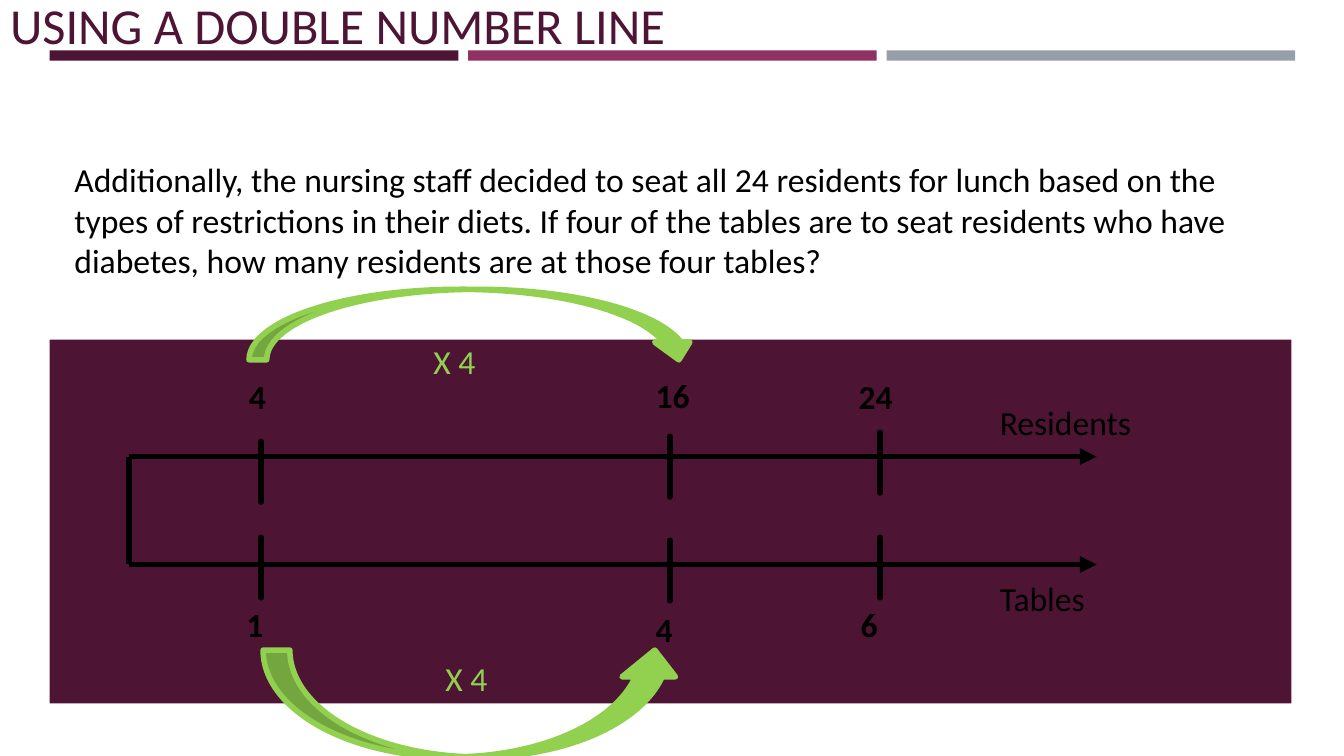
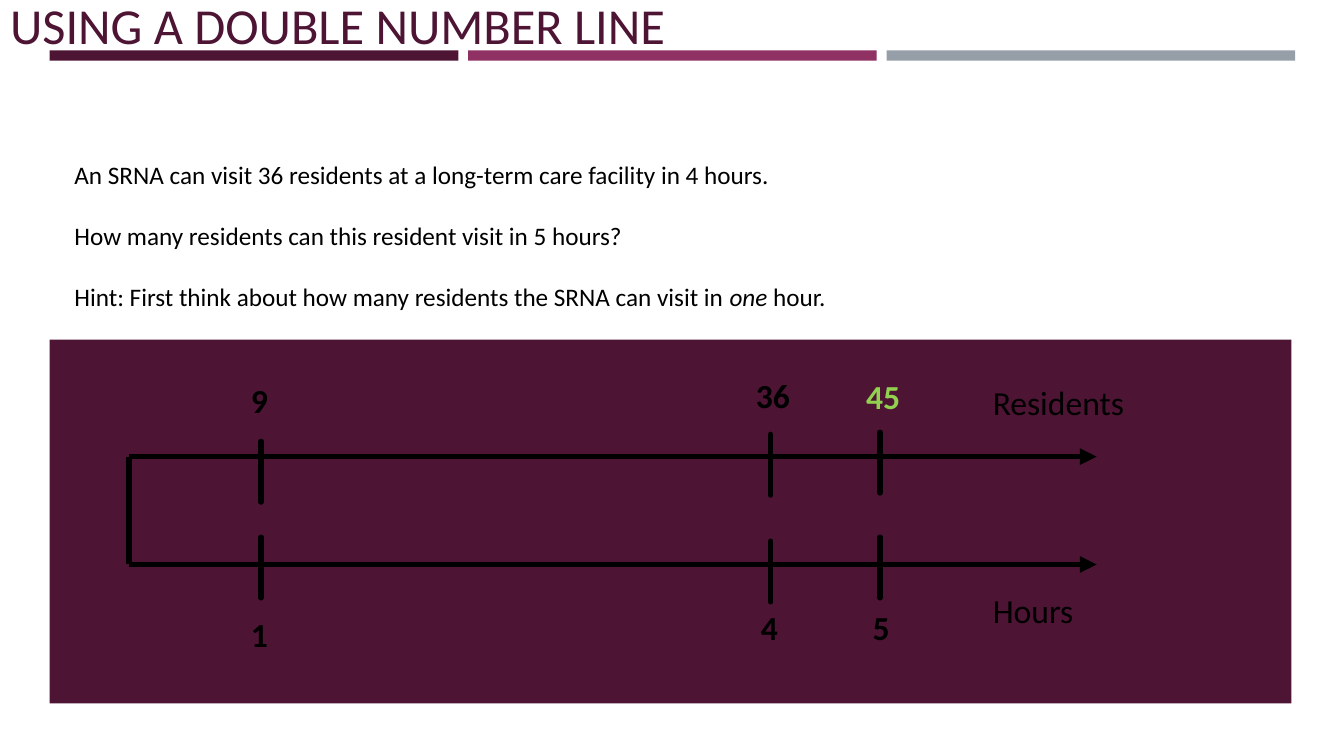
from collections import namedtuple

from lxml.etree import SubElement
from pptx import Presentation
from pptx.dml.color import RGBColor
from pptx.enum.shapes import MSO_CONNECTOR, MSO_SHAPE
from pptx.enum.text import MSO_ANCHOR, MSO_AUTO_SIZE, PP_ALIGN
from pptx.oxml.ns import qn
from pptx.util import Emu, Inches, Pt

WIDTH, HEIGHT = Inches(13.333), Inches(7.5)
PLUM, MAGENTA, GREY = "4D1434", "903163", "969FA7"
BLACK, GREEN = "000000", "92D050"
FONT = "Calibri"
TITLE = "USING A DOUBLE NUMBER LINE"

MARGIN, BAND_WIDTH, BAND_STEP = 3.7, 30.4, 31.13
AXIS_START, AXIS_END = 9.6, 81.6
TOP_AXIS, BOTTOM_AXIS = 60.4, 74.67
TICK_LENGTH, LABEL_HEIGHT = 8, 6.67

# x and y place the upper end of the tick; left and top place its label.
Tick = namedtuple("Tick", "x y label left top color", defaults=[BLACK])
FIRST_X, LAST_X = 19.42, 65.48


def across(share):
    return Emu(round(WIDTH * share / 100))


def down(share):
    return Emu(round(HEIGHT * share / 100))


def box(left, top, width, height):
    """Turn percentages of the slide's size into lengths."""
    return across(left), down(top), across(width), down(height)


def rgb(value):
    return RGBColor.from_string(value)


def add_run(paragraph, text, size, color=BLACK, bold=False, italic=False):
    run = paragraph.add_run()
    run.text = text
    font = run.font
    font.name, font.size, font.bold, font.italic = FONT, Pt(size), bold, italic
    font.color.rgb = rgb(color)


def add_filled(slide, preset, place, color, line_width=0):
    shape = slide.shapes.add_shape(preset, *box(*place))
    shape.shadow.inherit = False
    shape.fill.solid()
    shape.fill.fore_color.rgb = rgb(color)
    if line_width:
        shape.line.color.rgb = rgb(color)
        shape.line.width = Pt(line_width)
    else:
        shape.line.fill.background()
    return shape


def add_line(slide, start, end, cap="flat", arrow=False):
    line = slide.shapes.add_connector(
        MSO_CONNECTOR.STRAIGHT,
        across(start[0]), down(start[1]), across(end[0]), down(end[1]))
    line.line.color.rgb = rgb(BLACK)
    line.line.width = Pt(4)
    outline = line.line._get_or_add_ln()
    outline.set("cap", cap)
    if arrow:
        SubElement(outline, qn("a:tailEnd"), type="triangle")
    SubElement(line.element.spPr, qn("a:effectLst"))


def add_text(slide, place, paragraphs, size=24, gap=0):
    """Each paragraph is a list of (text, run options) pairs."""
    frame = slide.shapes.add_textbox(*box(*place)).text_frame
    frame.word_wrap = True
    for index, runs in enumerate(paragraphs):
        paragraph = frame.add_paragraph() if index else frame.paragraphs[0]
        if index:
            paragraph.space_before = Pt(gap)
        for text, options in runs:
            add_run(paragraph, text, size, **options)


def add_label(slide, text, left, top, width=6.2, **options):
    add_text(slide, (left, top, width, LABEL_HEIGHT), [[(text, options)]])


def add_bands_and_panel(slide, layout):
    """Draw the shared background and move it into the layout."""
    shared = [((MARGIN + BAND_STEP * index, 6.67, BAND_WIDTH, 1.35), color)
              for index, color in enumerate((PLUM, MAGENTA, GREY))]
    shared.append(((MARGIN, 44.93, 92.4, 48.13), PLUM))
    for place, color in shared:
        shape = add_filled(slide, MSO_SHAPE.RECTANGLE, place, color)
        layout.shapes.element.append(shape.element)


def add_title(slide):
    title = slide.shapes.title
    title.left, title.top, title.width, title.height = box(0, -2.93, 90.15, 10.8)
    frame = title.text_frame
    frame.auto_size = MSO_AUTO_SIZE.NONE
    frame.vertical_anchor = MSO_ANCHOR.BOTTOM
    paragraph = frame.paragraphs[0]
    paragraph.alignment = PP_ALIGN.LEFT
    add_run(paragraph, TITLE, 36, PLUM)


def add_number_line(slide, ticks, axis_names):
    for y in (TOP_AXIS, BOTTOM_AXIS):
        add_line(slide, (AXIS_START, y), (AXIS_END, y), arrow=True)
    add_line(slide, (AXIS_START, TOP_AXIS), (AXIS_START, BOTTOM_AXIS))
    for tick in ticks:
        add_line(slide, (tick.x, tick.y), (tick.x, tick.y + TICK_LENGTH), cap="rnd")
        add_label(slide, tick.label, tick.left, tick.top, color=tick.color, bold=True)
    for name, left, top in axis_names:
        add_label(slide, name, left, top, width=16.88)


def add_multiplier(slide, preset, place, left, top):
    add_filled(slide, preset, place, GREEN, line_width=4)
    add_label(slide, "X 4", left, top, width=9.5, color=GREEN)


def build_tables_slide(slide):
    add_title(slide)
    add_text(slide, (4.8, 20.4, 90.15, 17.47), [[(
        "Additionally, the nursing staff decided to seat all 24 residents for "
        "lunch based on the types of restrictions in their diets. If four of the "
        "tables are to seat residents who have diabetes, how many residents are "
        "at those four tables?", {})]])
    add_number_line(slide, [
        Tick(FIRST_X, 58.4, "4", 17.78, 49.07),
        Tick(49.84, 57.73, "16", 48.04, 48.93),
        Tick(LAST_X, 57.2, "24", 63.15, 49.07),
        Tick(FIRST_X, 71.07, "1", 17.59, 79.2),
        Tick(49.84, 71.47, "4", 48.04, 79.87),
        Tick(LAST_X, 71.07, "6", 63.3, 79.2),
    ], [("Residents", 73.65, 52.53), ("Tables", 73.65, 75.73)])
    add_multiplier(slide, MSO_SHAPE.CURVED_UP_ARROW,
                   (19.58, 86, 31.13, 14.13), 32.4, 86.4)
    add_multiplier(slide, MSO_SHAPE.CURVED_DOWN_ARROW,
                   (18.53, 38.27, 33.3, 9.33), 31.5, 44.4)


def build_hours_slide(slide):
    add_title(slide)
    add_text(slide, (4.8, 20.4, 90.15, 21.6), [
        [("An SRNA can visit 36 residents at a long-term care facility in 4 hours.", {})],
        [("How many residents can this resident visit in 5 hours?", {})],
        [("Hint: First think about how many residents the SRNA can visit in ", {}),
         ("one", {"italic": True}), (" hour.", {})],
    ], size=18, gap=22)
    add_number_line(slide, [
        Tick(FIRST_X, 58.4, "9", 17.93, 49.6),
        Tick(57.34, 57.47, "36", 55.5, 48.93),
        Tick(LAST_X, 57.2, "45", 63.71, 49.07, GREEN),
        Tick(FIRST_X, 71.07, "1", 17.93, 80.53),
        Tick(57.34, 71.6, "4", 55.88, 79.6),
        Tick(LAST_X, 71.07, "5", 64.2, 79.6),
    ], [("Residents", 73.13, 49.87), ("Hours", 73.13, 77.33)])


def main():
    deck = Presentation()
    deck.slide_width, deck.slide_height = WIDTH, HEIGHT
    title_only = deck.slide_layouts.get_by_name("Title Only")
    tables_slide = deck.slides.add_slide(title_only)
    hours_slide = deck.slides.add_slide(title_only)
    add_bands_and_panel(tables_slide, title_only)
    build_tables_slide(tables_slide)
    build_hours_slide(hours_slide)
    deck.save("out.pptx")


if __name__ == "__main__":
    main()
